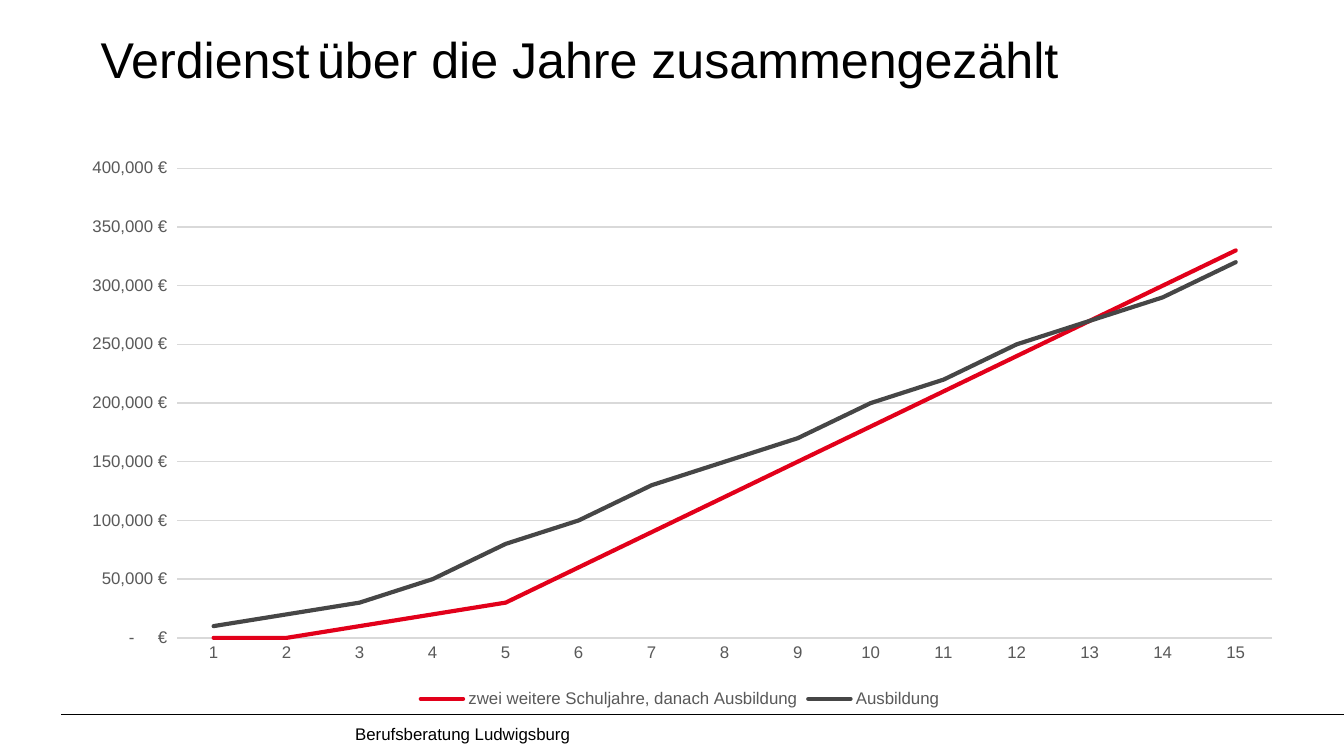
from lxml.etree import SubElement
from pptx import Presentation
from pptx.chart.data import CategoryChartData
from pptx.dml.color import RGBColor as Color
from pptx.enum.chart import XL_CHART_TYPE as ChartType
from pptx.enum.chart import XL_LEGEND_POSITION as LegendPosition
from pptx.enum.chart import XL_MARKER_STYLE as Marker
from pptx.enum.chart import XL_TICK_MARK as TickMark
from pptx.enum.shapes import MSO_CONNECTOR as Connector
from pptx.enum.text import MSO_ANCHOR as Anchor
from pptx.oxml.ns import qn
from pptx.util import Pt

TITLE = [("Verdienst", "title"), (" ", "gap"), ("über die Jahre zusammengezählt", "title")]
FOOTER = [("Berufsberatung Ludwigsburg", "footer")]
YEARS = [str(year) for year in range(1, 16)]
EARNINGS_IN_THOUSANDS = [
    ("zwei weitere Schuljahre, danach Ausbildung", "red",
     [0, 0, 10, 20, 30, 60, 90, 120, 150, 180, 210, 240, 270, 300, 330]),
    ("Ausbildung", "dark",
     [10, 20, 30, 50, 80, 100, 130, 150, 170, 200, 220, 250, 270, 290, 320]),
]
EURO_FORMAT = '_-* #,##0\\ "€"_-;\\-* #,##0\\ "€"_-;_-* "-"??\\ "€"_-;_-@_-'
THEME = {
    "font": "Arial",
    "size": {"title": 26.9, "gap": 14, "footer": 9, "label": 9},
    "color": {
        "title": Color.from_string("000000"),
        "gap": Color.from_string("595959"),
        "footer": Color.from_string("000000"),
        "label": Color.from_string("595959"),
        "grid": Color.from_string("D9D9D9"),
        "red": Color.from_string("E2001A"),
        "dark": Color.from_string("464646"),
    },
}
SLIDE_WIDTH, SLIDE_HEIGHT = 720, 405
RULE_LEFT, RULE_TOP = 32.7, 382.6
TITLE_BOX = (46.8, 11.7, 648, 67.7)
FOOTER_BOX = (183.2, RULE_TOP, 520.6, 21.6)
CHART_BOX = (33.8, 78.8, 661, 303.8)


def apply(target, values):
    for name, value in values.items():
        setattr(target, name, value)


def style_font(font, role):
    apply(font, {"name": THEME["font"], "size": Pt(THEME["size"][role])})
    font.color.rgb = THEME["color"][role]


def style_line(line, color, width):
    line.color.rgb = THEME["color"][color]
    line.width = Pt(width)


def add_text(slide, box, runs, anchor):
    frame = slide.shapes.add_textbox(*map(Pt, box)).text_frame
    apply(frame, {"word_wrap": True, "vertical_anchor": anchor})
    for text, role in runs:
        run = frame.paragraphs[0].add_run()
        run.text = text
        style_font(run.font, role)


def add_rule(slide):
    rule = slide.shapes.add_connector(
        Connector.STRAIGHT, Pt(RULE_LEFT), Pt(RULE_TOP), Pt(SLIDE_WIDTH), Pt(RULE_TOP)
    )
    style_line(rule.line, "title", 0.5)
    SubElement(rule._element.spPr, qn("a:effectLst"))


def add_earnings_chart(slide):
    data = CategoryChartData()
    data.categories = YEARS
    for name, _, thousands in EARNINGS_IN_THOUSANDS:
        data.add_series(name, [value * 1000 for value in thousands])
    chart = slide.shapes.add_chart(ChartType.LINE, *map(Pt, CHART_BOX), data).chart
    style_font(chart.font, "label")
    apply(chart, {"has_title": False, "has_legend": True})
    apply(chart.legend, {"position": LegendPosition.BOTTOM, "include_in_layout": False})
    style_font(chart.legend.font, "label")

    for axis in (chart.category_axis, chart.value_axis):
        apply(axis, {"major_tick_mark": TickMark.NONE, "minor_tick_mark": TickMark.NONE})
        style_font(axis.tick_labels.font, "label")
    style_line(chart.category_axis.format.line, "grid", 0.75)
    values = chart.value_axis
    apply(values, {"minimum_scale": 0, "maximum_scale": 400000, "major_unit": 50000})
    apply(values.tick_labels, {"number_format": EURO_FORMAT, "number_format_is_linked": False})
    values.format.line.fill.background()
    style_line(values.major_gridlines.format.line, "grid", 0.75)

    chart.plots[0].vary_by_categories = False
    for series, (_, color, _) in zip(chart.plots[0].series, EARNINGS_IN_THOUSANDS):
        series.smooth = False
        series.marker.style = Marker.NONE
        style_line(series.format.line, color, 2.25)
        for line in series._element.iter(qn("a:ln")):
            line.set("cap", "rnd")


def main():
    presentation = Presentation()
    apply(presentation, {"slide_width": Pt(SLIDE_WIDTH), "slide_height": Pt(SLIDE_HEIGHT)})
    slide = presentation.slides.add_slide(presentation.slide_layouts[6])
    add_rule(slide)
    add_text(slide, TITLE_BOX, TITLE, Anchor.TOP)
    add_text(slide, FOOTER_BOX, FOOTER, Anchor.MIDDLE)
    add_earnings_chart(slide)
    presentation.save("out.pptx")


if __name__ == "__main__":
    main()
